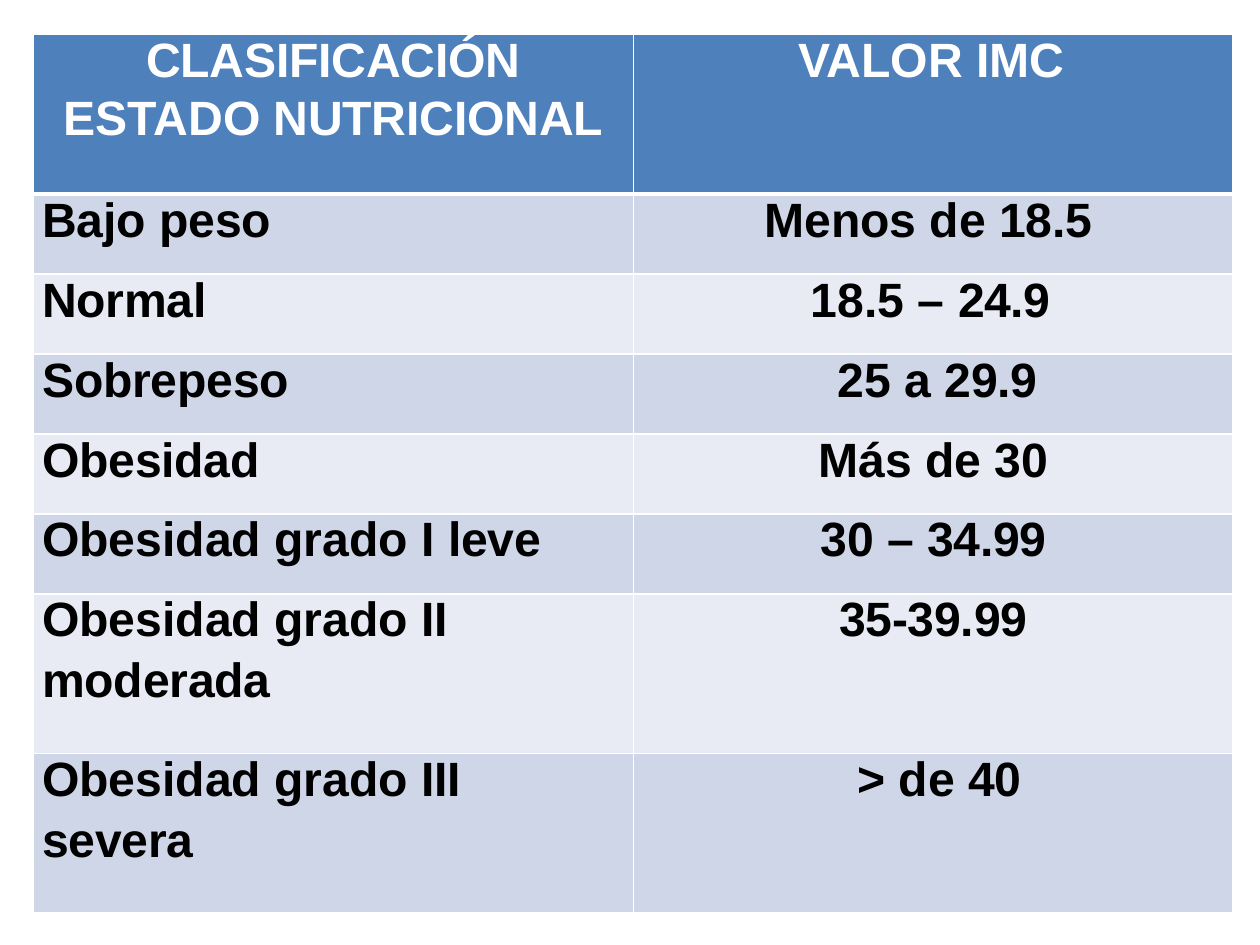
import dataclasses

import lxml.etree
import pptx
import pptx.dml.color
import pptx.enum.text
import pptx.oxml.ns
import pptx.util

Pt = pptx.util.Pt
RGBColor = pptx.dml.color.RGBColor
ALIGN = pptx.enum.text.PP_ALIGN

WHITE = RGBColor(0xFF, 0xFF, 0xFF)
BLACK = RGBColor(0x00, 0x00, 0x00)
HEADER_BLUE = RGBColor(0x4E, 0x80, 0xBB)
BANDS = (RGBColor(0xE8, 0xEB, 0xF3), RGBColor(0xCF, 0xD6, 0xE7))

LEFT, TOP = 19.1, 19.7
COL_WIDTH = 342.8
LABEL_INDENT = 5
SHORT_ROW, TALL_ROW = 45.7, 91.2


@dataclasses.dataclass
class Entry:
    lines: tuple[str, ...]
    align: ALIGN = ALIGN.LEFT
    indent: float = 0
    gap: float = 4


@dataclasses.dataclass
class Row:
    label: Entry
    value: Entry
    height: float = SHORT_ROW


def label(*lines: str) -> Entry:
    return Entry(lines, indent=LABEL_INDENT)


def centred(*lines: str, indent: float = 0, gap: float = 4) -> Entry:
    return Entry(lines, ALIGN.CENTER, indent, gap)


def indented(line: str, indent: float) -> Entry:
    return Entry((line,), indent=indent)


ROWS = [
    Row(centred("CLASIFICACIÓN", "ESTADO NUTRICIONAL", gap=2.4),
        indented("VALOR IMC", 94.3), TALL_ROW),
    Row(label("Bajo peso"), indented("Menos de 18.5", 74.9)),
    Row(label("Normal"), indented("18.5 – 24.9", 101.5)),
    Row(label("Sobrepeso"), centred("25 a 29.9", indent=5)),
    Row(label("Obesidad"), centred("Más de 30")),
    Row(label("Obesidad grado I leve"), centred("30 – 34.99")),
    Row(label("Obesidad grado II", "moderada"), centred("35-39.99"), TALL_ROW),
    Row(label("Obesidad grado III", "severa"),
        centred("> de 40", indent=7.2), TALL_ROW),
]


def add_text(p, text: str, *, align: ALIGN, indent: float, color: RGBColor,
             size: float = 27.5, font: str = "Arial") -> None:
    """Write one line; its last word is tracked slightly tighter."""
    p.alignment = align
    p._p.get_or_add_pPr().set("marL", str(Pt(indent)))
    head, space, tail = text.rpartition(" ")
    tail_tracking = -10 if len(tail) > 5 else -20
    for part, tracking in ((head + space, 0), (tail, tail_tracking)):
        if not part:
            continue
        r = p.add_run()
        r.text = part
        r.font.name, r.font.size, r.font.bold = font, Pt(size), True
        r.font.color.rgb = color
        r._r.get_or_add_rPr().set("spc", str(tracking))


def set_borders(cell, **widths: float) -> None:
    """Draw white cell borders, given as L, R, T and B widths."""
    qn = pptx.oxml.ns.qn
    tc_pr = cell._tc.get_or_add_tcPr()
    for i, (side, width) in enumerate(widths.items()):
        ln = lxml.etree.Element(qn(f"a:ln{side}"), w=str(Pt(width)))
        fill = lxml.etree.SubElement(ln, qn("a:solidFill"))
        lxml.etree.SubElement(fill, qn("a:srgbClr"), val=str(WHITE))
        tc_pr.insert(i, ln)


def fill_cell(cell, entry: Entry, fill: RGBColor, color: RGBColor) -> None:
    cell.fill.solid()
    cell.fill.fore_color.rgb = fill
    cell.margin_left = cell.margin_right = Pt(0)
    cell.margin_top = cell.margin_bottom = Pt(0)
    tf = cell.text_frame
    for i, line in enumerate(entry.lines):
        p = tf.add_paragraph() if i else tf.paragraphs[0]
        if i:
            p.space_before = Pt(entry.gap)
        else:
            p.line_spacing = Pt(30.5)
        add_text(p, line, align=entry.align, indent=entry.indent, color=color)


def main() -> None:
    prs = pptx.Presentation()
    prs.slide_width, prs.slide_height = Pt(720), Pt(540)
    s = prs.slides.add_slide(prs.slide_layouts[6])

    # Table frame
    sp = s.shapes.add_table(len(ROWS), 2, Pt(LEFT), Pt(TOP), Pt(2 * COL_WIDTH),
                            Pt(sum(row.height for row in ROWS)))
    table = sp.table
    table.first_row = table.horz_banding = False
    for column in table.columns:
        column.width = Pt(COL_WIDTH)

    # Header and banded rows
    for i, row in enumerate(ROWS):
        table.rows[i].height = Pt(row.height)
        fill, color = (BANDS[i % 2], BLACK) if i else (HEADER_BLUE, WHITE)
        for j, entry in enumerate((row.label, row.value)):
            cell = table.cell(i, j)
            fill_cell(cell, entry, fill, color)
            set_borders(cell, L=1, R=1, T=3 if i == 1 else 1,
                        B=3 if i == 0 else 1)

    prs.save("out.pptx")


if __name__ == "__main__":
    main()
